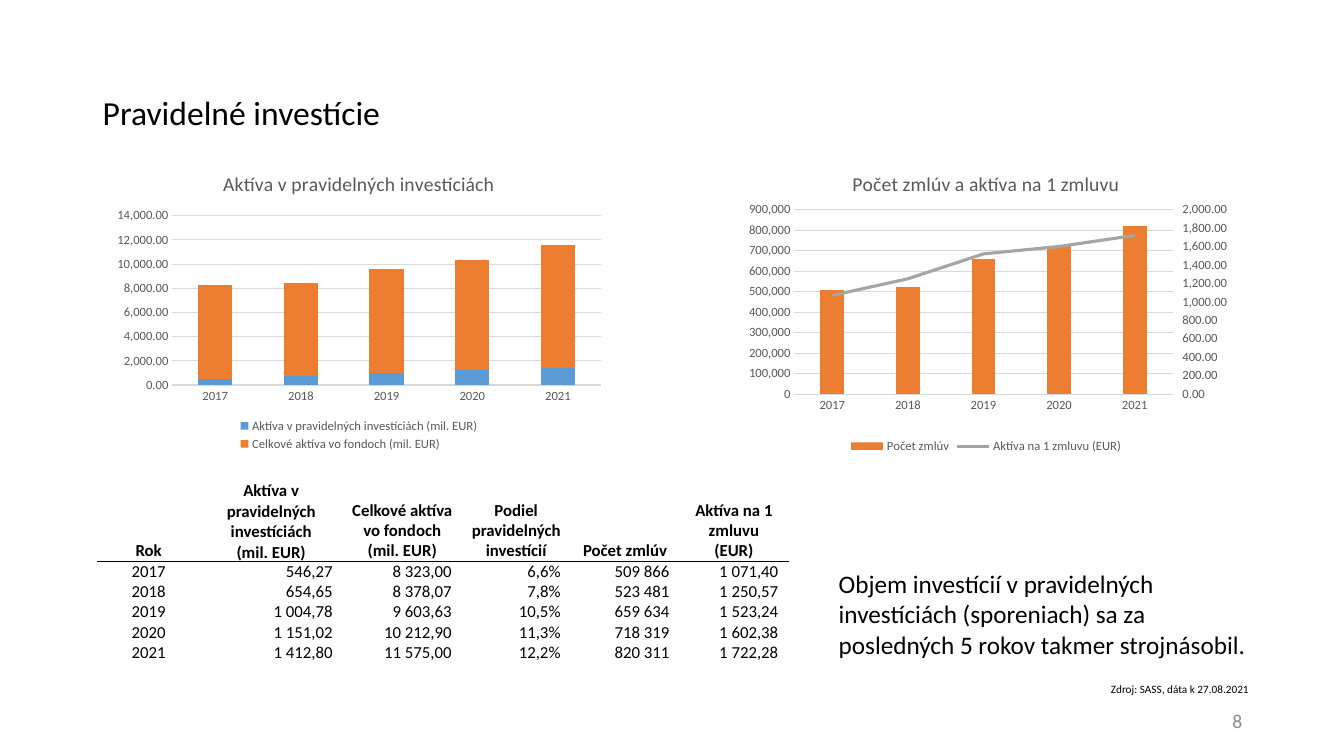
import pptx
import pptx.chart.data
import pptx.dml.color
import pptx.enum.chart
import pptx.enum.text
import pptx.oxml
import pptx.oxml.ns
import pptx.util

EMU_PER_PX = 9144  # 100 px to the inch
RGBColor = pptx.dml.color.RGBColor
BLACK = RGBColor(0x00, 0x00, 0x00)
TEXT_GREY = RGBColor(0x59, 0x59, 0x59)
NUMBER_GREY = RGBColor(0x8C, 0x8C, 0x8C)
GRID_GREY = RGBColor(0xD9, 0xD9, 0xD9)
LINE_GREY = RGBColor(0xA5, 0xA5, 0xA5)
BLUE = RGBColor(0x5B, 0x9B, 0xD5)
ORANGE = RGBColor(0xED, 0x7D, 0x31)

ALIGN = pptx.enum.text.PP_ALIGN
ANCHOR = pptx.enum.text.MSO_ANCHOR
TICK = pptx.enum.chart.XL_TICK_MARK
CHART_TYPE = pptx.enum.chart.XL_CHART_TYPE
NSDECLS = pptx.oxml.ns.nsdecls

YEARS = ["2017", "2018", "2019", "2020", "2021"]
COLUMN_WIDTHS = [101, 142, 118, 108, 108, 108]
HEADER_HEIGHT, ROW_HEIGHT = 78, 20
HEADER = ["Rok", "Aktíva v pravidelných investíciách\v(mil. EUR)",
          "Celkové aktíva vo fondoch\v(mil. EUR)", "Podiel pravidelných investícií",
          "Počet zmlúv", "Aktíva na 1 zmluvu\v(EUR)"]
FIGURES = [
    ["546,27", "8 323,00", "6,6%", "509 866", "1 071,40"],
    ["654,65", "8 378,07", "7,8%", "523 481", "1 250,57"],
    ["1 004,78", "9 603,63", "10,5%", "659 634", "1 523,24"],
    ["1 151,02", "10 212,90", "11,3%", "718 319", "1 602,38"],
    ["1 412,80", "11 575,00", "12,2%", "820 311", "1 722,28"],
]


def px(length):
    return pptx.util.Emu(length * EMU_PER_PX)


def apply_format(target, **values):
    for attribute, value in values.items():
        setattr(target, attribute, value)


def style_font(font, size, color, bold=False):
    apply_format(font, name="Calibri", size=pptx.util.Pt(size), bold=bold)
    font.color.rgb = color


def add_text(slide, box, text, size, color=BLACK, anchor=ANCHOR.TOP, align=ALIGN.LEFT, spacing=None):
    frame = slide.shapes.add_textbox(*map(px, box)).text_frame
    apply_format(frame, word_wrap=True, vertical_anchor=anchor, text=text)
    paragraph = frame.paragraphs[0]
    apply_format(paragraph, alignment=align, line_spacing=spacing)
    style_font(paragraph.runs[0].font, size, color)


def set_layout(part, x, y, w, h, inner=False):
    """Place a plot area or legend by fractions of the chart."""
    for old in part.findall(pptx.oxml.ns.qn("c:layout")):
        part.remove(old)
    target = '<c:layoutTarget val="inner"/>' if inner else ""
    layout = pptx.oxml.parse_xml(
        f'<c:layout {NSDECLS("c")}><c:manualLayout>{target}'
        '<c:xMode val="edge"/><c:yMode val="edge"/>'
        f'<c:x val="{x}"/><c:y val="{y}"/><c:w val="{w}"/><c:h val="{h}"/>'
        '</c:manualLayout></c:layout>')
    if inner:
        part.insert(0, layout)
    else:
        part.find(pptx.oxml.ns.qn("c:legendPos")).addnext(layout)


def add_column_chart(slide, box, kind, title, series, top, step, number_format, gap, overlap, plot_box):
    data = pptx.chart.data.CategoryChartData()
    data.categories = YEARS
    for name, values, _ in series:
        data.add_series(name, values)
    chart = slide.shapes.add_chart(kind, *map(px, box), data).chart
    style_font(chart.font, 10, BLACK)
    apply_format(chart, has_title=True, has_legend=True)
    chart.chart_title.text_frame.text = title
    style_font(chart.chart_title.text_frame.paragraphs[0].runs[0].font, 14, TEXT_GREY)

    apply_format(chart.legend, position=pptx.enum.chart.XL_LEGEND_POSITION.BOTTOM,
                 include_in_layout=False)
    plot = chart.plots[0]
    apply_format(plot, gap_width=gap, overlap=overlap, vary_by_categories=False)
    for column, (_, _, color) in zip(plot.series, series):
        column.format.fill.solid()
        column.format.fill.fore_color.rgb = color

    years, amounts = chart.category_axis, chart.value_axis
    for part in (years, amounts):
        apply_format(part, major_tick_mark=TICK.NONE, minor_tick_mark=TICK.NONE)
        style_font(part.tick_labels.font, 9, TEXT_GREY)
    style_font(chart.legend.font, 9, TEXT_GREY)
    apply_format(amounts, minimum_scale=0, maximum_scale=top, major_unit=step)
    apply_format(amounts.tick_labels, number_format=number_format, number_format_is_linked=False)
    amounts.format.line.fill.background()
    for line in (years.format.line, amounts.major_gridlines.format.line):
        line.color.rgb = GRID_GREY
        line.width = pptx.util.Pt(0.75)
    set_layout(chart.element.chart.plotArea, *plot_box, inner=True)
    return chart


def move_last_series_to_right_axis(chart, color, top, step):
    """Turn the last column series into a line on a second value axis."""
    plot_area = chart.element.chart.plotArea
    columns = plot_area.find(pptx.oxml.ns.qn("c:barChart"))
    series = columns.findall(pptx.oxml.ns.qn("c:ser"))[-1]
    line_chart = pptx.oxml.parse_xml(
        f'<c:lineChart {NSDECLS("c")}><c:grouping val="standard"/><c:varyColors val="0"/>'
        '<c:marker val="1"/><c:axId val="5001"/><c:axId val="5002"/></c:lineChart>')
    for tag in ("c:invertIfNegative", "c:spPr"):
        for old in series.findall(pptx.oxml.ns.qn(tag)):
            series.remove(old)
    line_chart.insert(2, series)
    columns.addnext(line_chart)
    for axis in (
        '<c:valAx {}><c:axId val="5002"/><c:scaling><c:orientation val="minMax"/>'
        f'<c:max val="{top}"/><c:min val="0"/></c:scaling><c:delete val="0"/><c:axPos val="r"/>'
        '<c:numFmt formatCode="#,##0.00" sourceLinked="0"/><c:majorTickMark val="out"/>'
        '<c:minorTickMark val="none"/><c:tickLblPos val="nextTo"/>'
        '<c:spPr><a:ln><a:noFill/></a:ln></c:spPr><c:txPr><a:bodyPr/><a:p><a:pPr>'
        f'<a:defRPr sz="900" b="0"><a:solidFill><a:srgbClr val="{TEXT_GREY}"/></a:solidFill>'
        '<a:latin typeface="Calibri"/></a:defRPr></a:pPr><a:endParaRPr lang="sk-SK"/></a:p></c:txPr>'
        f'<c:crossAx val="5001"/><c:crosses val="max"/><c:majorUnit val="{step}"/></c:valAx>',
        '<c:catAx {}><c:axId val="5001"/><c:scaling><c:orientation val="minMax"/></c:scaling>'
        '<c:delete val="1"/><c:axPos val="b"/><c:crossAx val="5002"/><c:crosses val="autoZero"/></c:catAx>',
    ):
        last_axis = plot_area.findall(pptx.oxml.ns.qn("c:valAx"))[-1]
        last_axis.addnext(pptx.oxml.parse_xml(axis.replace("{}", NSDECLS("c", "a"), 1)))
    line = chart.plots[1].series[0]
    line.smooth = False
    line.marker.style = pptx.enum.chart.XL_MARKER_STYLE.NONE
    line.format.line.color.rgb = color
    line.format.line.width = pptx.util.Pt(2.25)


def add_border(cell, side):
    cell._tc.get_or_add_tcPr().insert(0, pptx.oxml.parse_xml(
        f'<a:{side} {NSDECLS("a")} w="6350"><a:solidFill><a:srgbClr val="{BLACK}"/>'
        f'</a:solidFill></a:{side}>'))


def add_figures_table(slide, left, top):
    rows = [HEADER] + [[year] + figures for year, figures in zip(YEARS, FIGURES)]
    height = HEADER_HEIGHT + ROW_HEIGHT * len(YEARS)
    table = slide.shapes.add_table(len(rows), len(HEADER), px(left), px(top),
                                   px(sum(COLUMN_WIDTHS)), px(height)).table
    apply_format(table, first_row=False, horz_banding=False)
    for column, width in zip(table.columns, COLUMN_WIDTHS):
        column.width = px(width)
    for r, texts in enumerate(rows):
        table.rows[r].height = px(ROW_HEIGHT if r else HEADER_HEIGHT)
        for c, text in enumerate(texts):
            cell = table.cell(r, c)
            is_figure = r > 0 and c > 0
            apply_format(cell, text=text, vertical_anchor=ANCHOR.BOTTOM, margin_left=0, margin_top=0,
                         margin_right=px(10 if is_figure else 0), margin_bottom=0)
            cell.fill.background()
            paragraph = cell.text_frame.paragraphs[0]
            paragraph.alignment = ALIGN.RIGHT if is_figure else ALIGN.CENTER
            for run in paragraph.runs:
                style_font(run.font, 12, BLACK, bold=r == 0)
            if r < 2:
                add_border(cell, "lnT" if r else "lnB")


def main():
    deck = pptx.Presentation()
    apply_format(deck, slide_width=px(1333), slide_height=px(750))
    slide = deck.slides.add_slide(deck.slide_layouts[6])

    add_text(slide, (92, 41, 1150, 145), "Pravidelné investície", 24, anchor=ANCHOR.MIDDLE, spacing=0.9)
    assets = add_column_chart(
        slide, (106, 154, 500, 300), CHART_TYPE.COLUMN_STACKED, "Aktíva v pravidelných investíciách",
        [("Aktíva v pravidelných investíciách (mil. EUR)", [500, 700, 1000, 1200, 1400], BLUE),
         ("Celkové aktíva vo fondoch (mil. EUR)", [7800, 7700, 8600, 9100, 10200], ORANGE)],
        14000, 2000, "#,##0.00", 150, 100, (0.13, 0.2, 0.85, 0.56))
    set_layout(assets.element.chart.find(pptx.oxml.ns.qn("c:legend")), 0.22, 0.86, 0.56, 0.13)
    contracts = add_column_chart(
        slide, (728, 154, 500, 300), CHART_TYPE.COLUMN_CLUSTERED, "Počet zmlúv a aktíva na 1 zmluvu",
        [("Počet zmlúv", [510000, 520000, 660000, 720000, 820000], ORANGE),
         ("Aktíva na 1 zmluvu (EUR)", [1070, 1250, 1520, 1600, 1720], LINE_GREY)],
        900000, 100000, "#,##0", 219, -27, (0.12, 0.18, 0.75, 0.61))
    move_last_series_to_right_axis(contracts, LINE_GREY, 2000, 200)
    add_figures_table(slide, 97, 477)
    add_text(slide, (822, 559, 432, 101), "Objem investícií v pravidelných investíciách (sporeniach) "
             "sa za posledných 5 rokov takmer strojnásobil.", 18)
    add_text(slide, (1092, 672, 162, 24), "Zdroj: SASS, dáta k 27.08.2021", 8)
    add_text(slide, (942, 695, 300, 40), "8", 14, NUMBER_GREY, ANCHOR.MIDDLE, ALIGN.RIGHT)
    deck.save("out.pptx")


if __name__ == "__main__":
    main()
